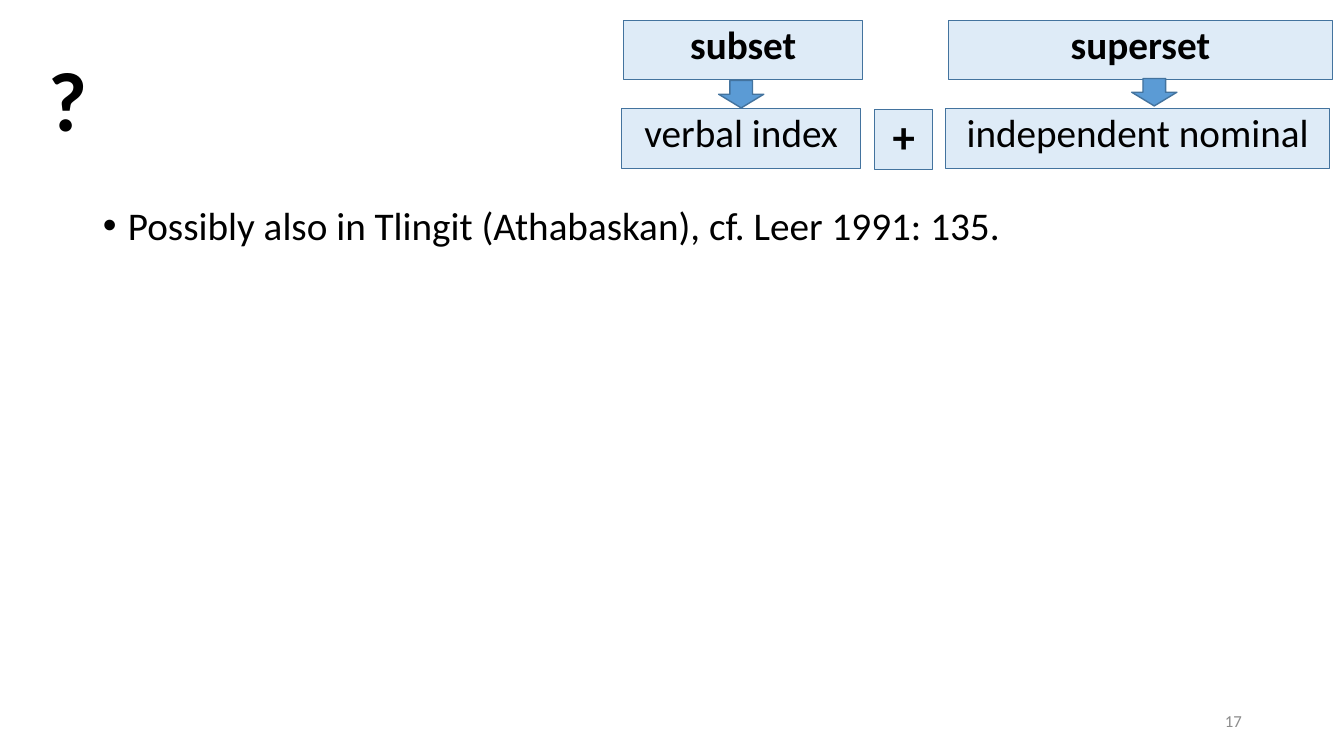
from pptx import Presentation
from pptx.dml.color import RGBColor
from pptx.enum.shapes import MSO_SHAPE
from pptx.enum.text import MSO_ANCHOR, MSO_AUTO_SIZE, PP_ALIGN
from pptx.util import Cm, Pt

PALE, BLUE, EDGE = "DEEBF7", "5B9BD5", "43739E"
BLACK, GREY = "000000", "8C8C8C"
BOX_HEIGHT = 1.5
SPACED = {"line_spacing": 0.9, "space_before": Pt(10)}


def colour(value):
    return RGBColor.from_string(value)


def set_all(target, values):
    for name, value in values.items():
        setattr(target, name, value)


def place(shape, left, top, width, height):
    set_all(shape, {"left": Cm(left), "top": Cm(top),
                    "width": Cm(width), "height": Cm(height)})


def write(shape, text, size, bold=False, ink=BLACK,
          align=PP_ALIGN.LEFT, anchor=MSO_ANCHOR.TOP, spacing=SPACED):
    frame = shape.text_frame
    set_all(frame, {"word_wrap": True, "auto_size": MSO_AUTO_SIZE.NONE,
                    "vertical_anchor": anchor})
    para = frame.paragraphs[0]
    set_all(para, {"alignment": align, **spacing})
    span = para.add_run()
    span.text = text
    set_all(span.font, {"name": "Calibri", "size": Pt(size), "bold": bold})
    span.font.color.rgb = colour(ink)
    return para


def add_figure(page, kind, bounds, fill, line_width):
    shape = page.shapes.add_shape(kind, *map(Cm, bounds))
    shape.shadow.inherit = False
    shape.fill.solid()
    shape.fill.fore_color.rgb = colour(fill)
    shape.line.color.rgb = colour(EDGE)
    shape.line.width = Pt(line_width)
    return shape


def add_box(page, left, top, width, text, size=28, bold=False):
    bounds = (left, top, width, BOX_HEIGHT)
    box = add_figure(page, MSO_SHAPE.RECTANGLE, bounds, PALE, 0.75)
    write(box, text, size, bold, align=PP_ALIGN.CENTER)


def add_down_arrow(page, left, top):
    add_figure(page, MSO_SHAPE.DOWN_ARROW, (left, top, 1.14, 0.69), BLUE, 1)


def main():
    deck = Presentation()
    set_all(deck, {"slide_width": Cm(33.87), "slide_height": Cm(19.05)})
    page = deck.slides.add_slide(deck.slide_layouts[1])

    # Title and list
    title, body = page.placeholders
    place(title, 0.97, 1.35, 5.21, 2.41)
    write(title, "?", 60, bold=True)
    place(body, 2.34, 5.08, 30.78, 12.09)
    item = write(body, "Possibly also in Tlingit (Athabaskan), cf. Leer 1991: 135.", 28)
    indent = Cm(0.63)
    properties = item._p.get_or_add_pPr()
    properties.set("marL", str(indent))
    properties.set("indent", str(-indent))

    # Lower row: the two forms combined
    add_box(page, 15.67, 2.74, 6.02, "verbal index")
    add_box(page, 22.05, 2.77, 1.45, "+", size=32, bold=True)
    add_box(page, 23.83, 2.74, 9.68, "independent nominal")

    # Upper row: what each form refers to
    add_box(page, 15.72, 0.51, 6.02, "subset", bold=True)
    add_box(page, 23.9, 0.51, 9.68, "superset", bold=True)
    add_down_arrow(page, 18.11, 2.03)
    add_down_arrow(page, 28.52, 1.98)

    # Page number
    number = page.shapes.add_textbox(Cm(23.93), Cm(17.65), Cm(7.62), Cm(1.02))
    write(number, "17", 12, ink=GREY, align=PP_ALIGN.RIGHT,
          anchor=MSO_ANCHOR.MIDDLE, spacing={})

    deck.save("out.pptx")


if __name__ == "__main__":
    main()
